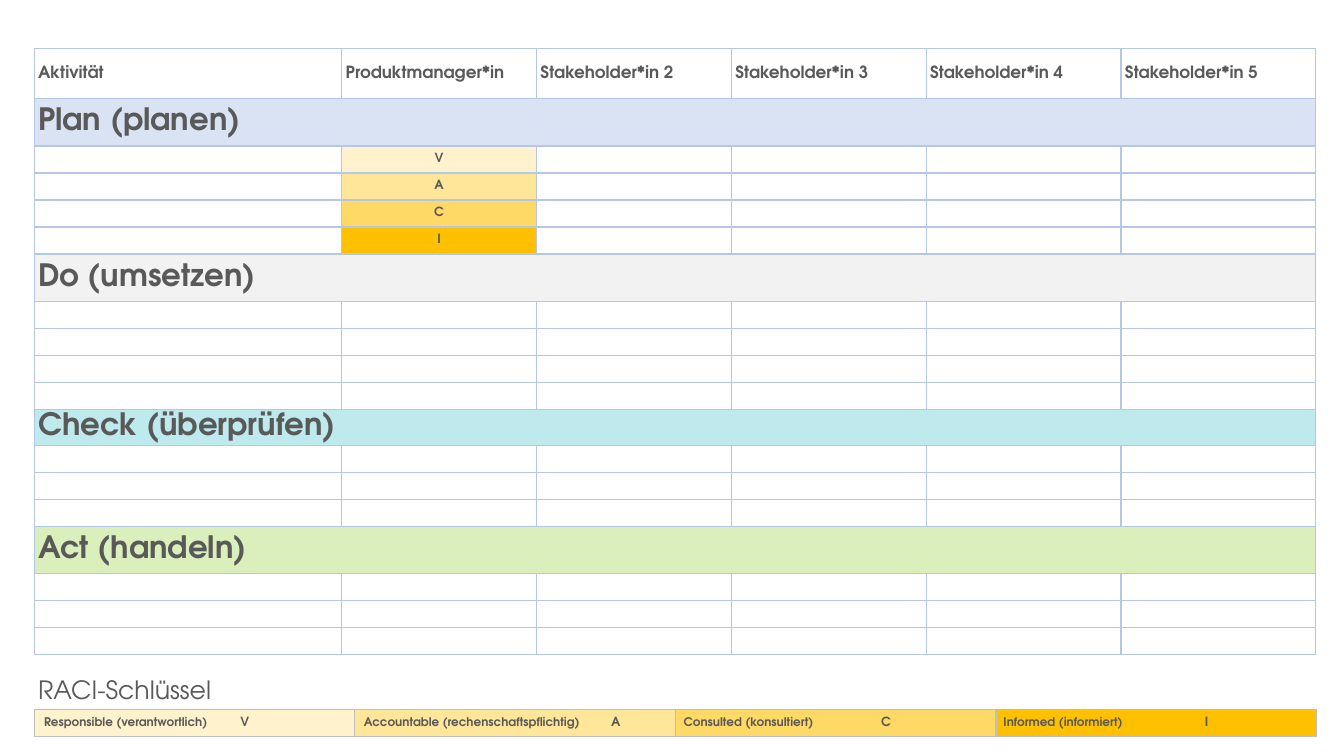
from dataclasses import dataclass

from lxml import etree
from pptx import Presentation
from pptx.dml.color import RGBColor
from pptx.enum.text import MSO_ANCHOR, PP_ALIGN
from pptx.oxml.ns import qn
from pptx.util import Cm, Pt

MIDDLE = MSO_ANCHOR.MIDDLE
LEFT = PP_ALIGN.LEFT
CENTER = PP_ALIGN.CENTER

FONT = "TeX Gyre Adventor"
GREY = "595959"
WHITE = "FFFFFF"
EDGE = 0.86
ROW = 0.68
PAD = 0.1
TAB = 2.54
KEY_TOP = 17.88
KEY_STEP = 8.06
KEY_WIDTH = 8.08


@dataclass
class Role:
    label: str
    letter: str
    color: str
    tabs: int = 1


@dataclass
class Phase:
    title: str
    color: str
    height: float
    count: int


ROLES = [
    Role("Responsible (verantwortlich)", "V", "FFF2CC"),
    Role("Accountable (rechenschaftspflichtig)", "A", "FFE699", 2),
    Role("Consulted (konsultiert)", "C", "FFD966"),
    Role("Informed (informiert)", "I", "FFC000"),
]
PHASES = [
    Phase("Plan (planen)", "DAE3F3", 1.19, 4),
    Phase("Do (umsetzen)", "F2F2F2", 1.19, 4),
    Phase("Check (überprüfen)", "BFEAED", 0.86, 3),
    Phase("Act (handeln)", "DAEFBB", 1.19, 3),
]
HEADS = ["Aktivität", "Produktmanager*in"] + [f"Stakeholder*in {n}" for n in range(2, 6)]


def rgb(code: str) -> RGBColor:
    return RGBColor.from_string(code)


def write(para, text: str, size: float, bold: bool = True, align=LEFT) -> None:
    para.text = text
    para.alignment = align
    font = para.font
    font.name = FONT
    font.size = Pt(size)
    font.bold = bold
    font.color.rgb = rgb(GREY)
    if not text:
        etree.SubElement(para._p, qn("a:endParaRPr"), sz=str(int(size * 100)))


def frame(cell, color: str) -> None:
    props = cell._tc.get_or_add_tcPr()
    for side in ("lnL", "lnR", "lnT", "lnB"):
        line = etree.SubElement(props, qn(f"a:{side}"), w=str(Pt(1)))
        solid = etree.SubElement(line, qn("a:solidFill"))
        etree.SubElement(solid, qn("a:srgbClr"), val=color)


def style(cell, text: str, size: float, fill: str, line: str, align=LEFT, shift: float = 0) -> None:
    frame(cell, line)
    cell.fill.solid()
    cell.fill.fore_color.rgb = rgb(fill)
    cell.vertical_anchor = MIDDLE
    cell.margin_left = Cm(PAD + shift)
    cell.margin_right = cell.margin_top = cell.margin_bottom = Cm(PAD)
    write(cell.text_frame.paragraphs[0], text, size, align=align)


def grid(slide, top: float, widths: list[float], heights: list[float]):
    shape = slide.shapes.add_table(
        len(heights), len(widths), Cm(EDGE), Cm(top), Cm(sum(widths)), Cm(sum(heights))
    )
    table = shape.table
    table.first_row = False
    table.horz_banding = False
    for col, width in zip(table.columns, widths):
        col.width = Cm(width)
    for row, height in zip(table.rows, heights):
        row.height = Cm(height)
    return table


def label(slide, text: str, left: float, top: float, width: float, height: float,
          size: float, bold: bool) -> None:
    box = slide.shapes.add_textbox(Cm(left), Cm(top), Cm(width), Cm(height))
    box.text_frame.word_wrap = True
    write(box.text_frame.paragraphs[0], text, size, bold)


def draw_plan(slide) -> None:
    line = "B4C7E7"
    heights = [1.27]
    for phase in PHASES:
        heights += [phase.height] + [ROW] * phase.count
    table = grid(slide, 1.22, [7.75] + [4.91] * 5, heights)
    last = len(HEADS) - 1
    for col, head in enumerate(HEADS):
        style(table.cell(0, col), head, 12, WHITE, line)
    row = 1
    for phase in PHASES:
        for col in range(last + 1):
            style(table.cell(row, col), "" if col else phase.title, 22, phase.color, line)
        table.cell(row, 0).merge(table.cell(row, last))
        for item in range(phase.count):
            for col in range(last + 1):
                cell = table.cell(row + 1 + item, col)
                if phase is PHASES[0] and col == 1:
                    role = ROLES[item]
                    style(cell, role.letter, 9, role.color, line, CENTER)
                else:
                    style(cell, "", 9, WHITE, line)
        row += phase.count + 1


def draw_key(slide) -> None:
    table = grid(slide, KEY_TOP, [KEY_WIDTH] * len(ROLES), [ROW])
    for col, role in enumerate(ROLES):
        style(table.cell(0, col), role.letter, 9, role.color, "BFBFBF", CENTER, role.tabs * TAB)
        label(slide, role.label, EDGE + col * KEY_STEP, KEY_TOP, 8.03, 0.64, 8.5, True)
    label(slide, "RACI-Schlüssel", 0.71, 16.87, 13.06, 1.02, 18, False)


def main() -> None:
    deck = Presentation()
    deck.slide_width = Cm(33.87)
    deck.slide_height = Cm(19.05)
    slide = deck.slides.add_slide(deck.slide_layouts[6])
    draw_plan(slide)
    draw_key(slide)
    deck.save("out.pptx")


if __name__ == "__main__":
    main()
